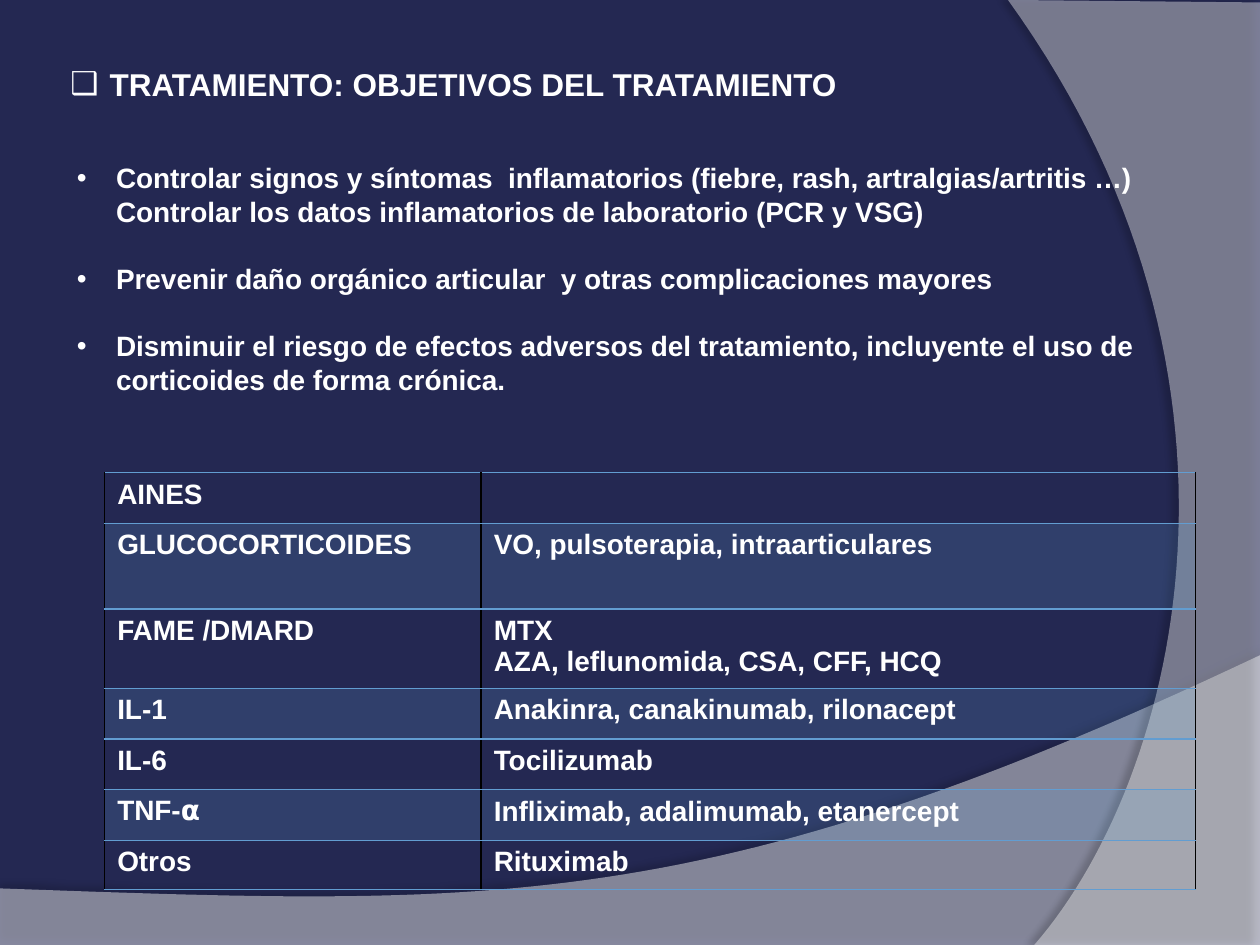
from lxml import etree
from pptx import Presentation
from pptx.dml.color import RGBColor
from pptx.oxml import ns
from pptx.util import Cm, Pt

COLORS = {"night": "242852", "white": "FFFFFF", "blue": "629DD1", "black": "000000"}
FONT, SYMBOL_FONT = "Arial", "DejaVu Sans"
INDENT = Cm(0.79)

TITLE = "TRATAMIENTO: OBJETIVOS DEL TRATAMIENTO"
# (text, bullet, space after in points)
GOALS = [
    ("Controlar signos y síntomas  inflamatorios (fiebre, rash, artralgias/artritis …)", "•", 0),
    ("Controlar los datos inflamatorios de laboratorio (PCR y VSG)", None, 19.2),
    ("Prevenir daño orgánico articular  y otras complicaciones mayores", "•", 19.2),
    ("Disminuir el riesgo de efectos adversos del tratamiento, incluyente el uso de "
     "corticoides de forma crónica.", "•", 0),
]
# (drug group, drugs one paragraph each, row height in cm)
DRUGS = [
    ("AINES", [], 1.02),
    ("GLUCOCORTICOIDES", ["VO, pulsoterapia, intraarticulares"], 1.73),
    ("FAME /DMARD", ["MTX", "AZA, leflunomida, CSA, CFF, HCQ"], 1.6),
    ("IL-1", ["Anakinra, canakinumab, rilonacept"], 1.02),
    ("IL-6", ["Tocilizumab"], 1.02),
    ("TNF-α", ["Infliximab, adalimumab, etanercept"], 1.02),
    ("Otros", ["Rituximab"], 0.99),
]
COLUMN_WIDTHS = [7.59, 14.4]
# Straight corners, then a Bézier curve from the last corner (cm); opacity and shadow
WAVES = [
    {"corners": [(0, 17.91), (0, 19.05), (25.4, 19.05), (25.4, 13.21)],
     "curve": [(14.2, 18.52), (9.93, 18.26), (0, 17.91)],
     "opacity": 45, "shadow": (35, 3.5, 270)},
    {"corners": [(25.4, 0.05), (25.4, 19.05), (20.85, 19.05)],
     "curve": [(23.75, 15.72), (25.83, 7.62), (20.32, 0)],
     "opacity": 40, "shadow": (45, 4, 180)},
]


def add_xml(parent, tag, **attributes):
    values = {name: str(value) for name, value in attributes.items()}
    return etree.SubElement(parent, ns.qn(tag), values)


def add_color(parent, color, opacity=100):
    node = add_xml(parent, "a:srgbClr", val=COLORS[color])
    if opacity < 100:
        add_xml(node, "a:alpha", val=opacity * 1000)


def fill_translucent(fill, container, color, opacity):
    fill.solid()
    fill.fore_color.rgb = RGBColor.from_string(COLORS[color])
    solid = container.find(ns.qn("a:solidFill"))
    add_xml(solid[0], "a:alpha", val=opacity * 1000)


def bezier(points, steps=60):
    p0, p1, p2, p3 = points
    for t in (i / steps for i in range(1, steps + 1)):
        s = 1 - t
        yield tuple(s**3 * a + 3 * s * s * t * b + 3 * s * t * t * c + t**3 * d
                    for a, b, c, d in zip(p0, p1, p2, p3))


def add_wave(slide, corners, curve, opacity, shadow):
    outline = [*corners, *bezier([corners[-1], *curve])]
    points = [(Cm(x), Cm(y)) for x, y in outline]
    builder = slide.shapes.build_freeform(*points[0], scale=1.0)
    builder.add_line_segments(points[1:], close=True)
    wave = builder.convert_to_shape()
    wave.line.fill.background()
    properties = wave._element.spPr
    fill_translucent(wave.fill, properties, "white", opacity)
    shade, distance, angle = shadow
    effects = add_xml(properties, "a:effectLst")
    outer = add_xml(effects, "a:outerShdw", blurRad=Pt(4), dist=Pt(distance),
                    dir=angle * 60000, algn="ctr", rotWithShape=0)
    add_color(outer, "black", shade)


def write(paragraph, content, size=16, bullet=None, indent=0, after=0, spacing=None):
    """Write white bold text, with Greek letters in the symbol font."""
    paragraph.space_after = Pt(after)
    if spacing:
        paragraph.line_spacing = Pt(spacing)
    properties = paragraph._p.get_or_add_pPr()
    if indent:
        properties.set("marL", str(indent))
        properties.set("indent", str(-indent if bullet else 0))
    if bullet:
        add_color(add_xml(properties, "a:buClr"), "white")
        add_xml(properties, "a:buFont", typeface=FONT)
        add_xml(properties, "a:buChar", char=bullet)
    for piece in filter(None, content.partition("α")):
        run = paragraph.add_run()
        run.text = piece
        run.font.name = SYMBOL_FONT if piece == "α" else FONT
        run.font.size = Pt(size)
        run.font.bold = True
        run.font.color.rgb = RGBColor.from_string(COLORS["white"])


def paragraphs(frame, count):
    return [frame.paragraphs[0]] + [frame.add_paragraph() for _ in range(count - 1)]


def add_box(slide, left, top, width, height, wrap=True):
    frame = slide.shapes.add_textbox(Cm(left), Cm(top), Cm(width), Cm(height)).text_frame
    frame.word_wrap = wrap
    return frame


def style_cell(cell, banded):
    properties = cell._tc.get_or_add_tcPr()
    borders = [("a:lnL", "black"), ("a:lnR", "black"), ("a:lnT", "blue"), ("a:lnB", "blue")]
    for tag, color in borders:
        line = add_xml(properties, tag, w=Pt(0.96))
        add_color(add_xml(line, "a:solidFill"), color)
    if banded:
        fill_translucent(cell.fill, properties, "blue", 20)
    else:
        cell.fill.background()


def add_drug_table(slide):
    heights = [height for *_, height in DRUGS]
    table = slide.shapes.add_table(len(DRUGS), 2, Cm(2.11), Cm(9.53),
                                   Cm(sum(COLUMN_WIDTHS)), Cm(sum(heights))).table
    table.first_row = table.horz_banding = False
    for column, width in zip(table.columns, COLUMN_WIDTHS):
        column.width = Cm(width)
    for i, (group, drugs, height) in enumerate(DRUGS):
        table.rows[i].height = Cm(height)
        for cell, lines in zip(table.rows[i].cells, ([group], drugs)):
            style_cell(cell, banded=i % 2 == 1)
            for paragraph, line in zip(paragraphs(cell.text_frame, len(lines)), lines):
                write(paragraph, line, spacing=17.7)


def main():
    deck = Presentation()
    deck.slide_width, deck.slide_height = Cm(25.4), Cm(19.05)
    slide = deck.slides.add_slide(deck.slide_layouts[6])
    slide.background.fill.solid()
    slide.background.fill.fore_color.rgb = RGBColor.from_string(COLORS["night"])
    for wave in WAVES:
        add_wave(slide, **wave)

    title = add_box(slide, 1.17, 1.19, 16.13, 1.02, wrap=False)
    write(title.paragraphs[0], TITLE, size=18, bullet="❑", indent=INDENT)
    goals = add_box(slide, 1.3, 3.12, 22.81, 5.74)
    for paragraph, (goal, bullet, after) in zip(paragraphs(goals, len(GOALS)), GOALS):
        write(paragraph, goal, bullet=bullet, indent=INDENT, after=after, spacing=19.2)
    add_drug_table(slide)
    deck.save("out.pptx")


if __name__ == "__main__":
    main()
